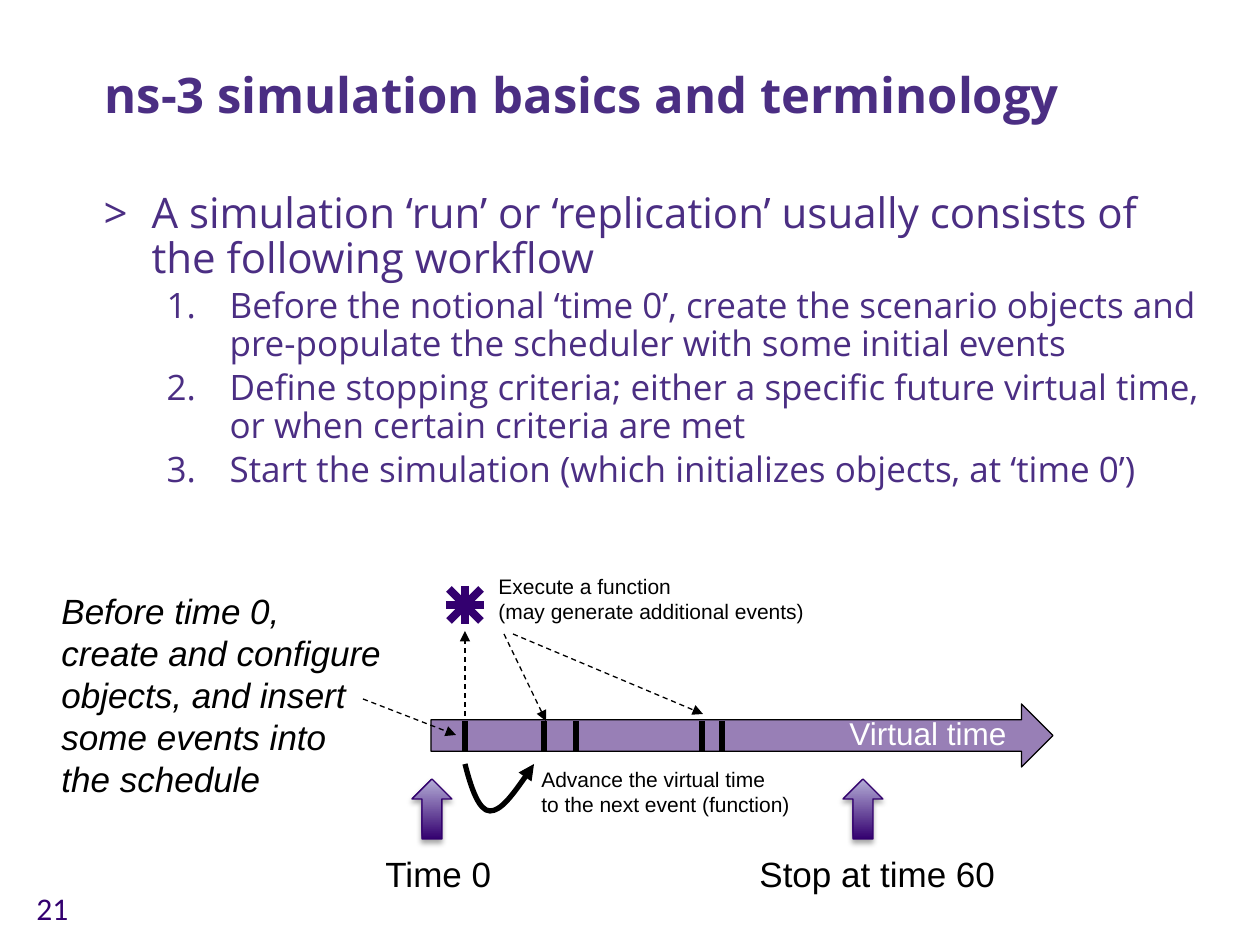
from lxml import etree
from pptx import Presentation
from pptx.dml.color import RGBColor
from pptx.enum.dml import MSO_LINE
from pptx.enum.shapes import MSO_CONNECTOR, MSO_SHAPE
from pptx.enum.text import MSO_ANCHOR, MSO_AUTO_SIZE, PP_ALIGN
from pptx.oxml import parse_xml
from pptx.oxml.ns import nsdecls, qn
from pptx.util import Emu, Pt

STRAIGHT = MSO_CONNECTOR.STRAIGHT
RIGHT_ARROW, UP_ARROW = MSO_SHAPE.RIGHT_ARROW, MSO_SHAPE.UP_ARROW
DASH = MSO_LINE.DASH
BOTTOM, TOP = MSO_ANCHOR.BOTTOM, MSO_ANCHOR.TOP
LEFT = PP_ALIGN.LEFT
NO_FIT, GROW = MSO_AUTO_SIZE.NONE, MSO_AUTO_SIZE.SHAPE_TO_FIT_TEXT

PX = 914400 / 126
PURPLE, DEEP_PURPLE, LILAC = "4B2E83", "33006F", "B5AED7"
BLACK, WHITE = "000000", "FFFFFF"
HEADING_FONT, LABEL_FONT = "Open Sans", "Arial"

TITLE = "ns-3 simulation basics and terminology"
TITLE_BOX = (92, 53, 1128, 77)
INTRO = "A simulation ‘run’ or ‘replication’ usually consists of the following workflow"
STEPS = [
    "Before the notional ‘time 0’, create the scenario objects and "
    "pre-populate the scheduler with some initial events",
    "Define stopping criteria; either a specific future virtual time, "
    "or when certain criteria are met",
    "Start the simulation (which initializes objects, at ‘time 0’)",
]
BODY_BOX = (91, 186, 1129, 614)

# box, lines, size, colour, font, italic
LABELS = [
    ((24, 883, 67, 50), ["21"], 18, DEEP_PURPLE, "Calibri", False),
    ((486, 567, 333, 63), ["Execute a function", "(may generate additional events)"],
     12, BLACK, LABEL_FONT, False),
    ((529, 760, 276, 63), ["Advance the virtual time", "to the next event (function)"],
     12, BLACK, LABEL_FONT, False),
    ((837, 708, 184, 50), ["Virtual time"], 18, WHITE, LABEL_FONT, False),
    ((373, 846, 132, 55), ["Time 0"], 20, BLACK, LABEL_FONT, False),
    ((747, 846, 272, 55), ["Stop at time 60"], 20, BLACK, LABEL_FONT, False),
    ((49, 583, 348, 224),
     ["Before time 0,", "create and configure", "objects, and insert",
      "some events into", "the schedule"], 20, BLACK, LABEL_FONT, True),
]

TIMELINE_BOX = (431, 704, 622, 63)
EVENT_TIMES = [465, 544, 576, 702, 722]
EVENT_TOP, EVENT_BOTTOM = 721, 752
STAR_CENTRE, STAR_ARM, STAR_DIAGONAL = (465, 605), 19, 16
DASHED_ARROWS = [
    ((465, 716), (465, 631)),
    ((504, 634), (546, 721)),
    ((513, 634), (703, 714)),
    ((363, 699), (456, 735)),
]
ADVANCE_START = (465, 764)
ADVANCE_CURVE = [(471, 788), (479, 811), (490, 811), (501, 811), (518, 788), (534, 764)]
MARKER_LEFTS, MARKER_TOP, MARKER_SIZE = [412, 843], 779, (40, 60)


def px(value):
    return Emu(round(value * PX))


def color(hex_string):
    return RGBColor.from_string(hex_string)


def place(shape, box):
    shape.left, shape.top, shape.width, shape.height = map(px, box)


def add_run(paragraph, text, size, hex_color, font, bold=False, italic=False):
    run = paragraph.add_run()
    run.text = text
    run.font.size = Pt(size)
    run.font.name = font
    run.font.bold = bold
    run.font.italic = italic
    run.font.color.rgb = color(hex_color)


def add_bullet(paragraph, indent, hanging, bullet_tag, **attributes):
    properties = paragraph._p.get_or_add_pPr()
    properties.set("marL", str(px(indent)))
    properties.set("indent", str(-px(hanging)))
    etree.SubElement(properties, qn("a:buFont"), typeface=HEADING_FONT)
    etree.SubElement(properties, qn(bullet_tag), **attributes)


def add_label(slide, box, lines, size, hex_color, font, italic):
    text_box = slide.shapes.add_textbox(*map(px, box))
    frame = text_box.text_frame
    frame.word_wrap = False
    frame.auto_size = GROW
    for number, text in enumerate(lines):
        paragraph = frame.add_paragraph() if number else frame.paragraphs[0]
        add_run(paragraph, text, size, hex_color, font, italic=italic)


def add_arrowhead(line):
    etree.SubElement(line._get_or_add_ln(), qn("a:tailEnd"), type="triangle")


def add_line(slide, start, end, hex_color, width):
    connector = slide.shapes.add_connector(STRAIGHT, *map(px, start + end))
    connector.line.color.rgb = color(hex_color)
    connector.line.width = Pt(width)
    etree.SubElement(connector._element.spPr, qn("a:effectLst"))
    return connector


def add_timeline(slide):
    timeline = slide.shapes.add_shape(RIGHT_ARROW, *map(px, TIMELINE_BOX))
    timeline.shadow.inherit = False
    timeline.fill.solid()
    timeline.fill.fore_color.rgb = color(DEEP_PURPLE)
    fill_color = timeline._element.spPr.find(qn("a:solidFill"))[0]
    etree.SubElement(fill_color, qn("a:alpha"), val="50000")
    timeline.line.color.rgb = color(BLACK)
    timeline.line.width = Pt(0.75)


def add_star(slide):
    x, y = STAR_CENTRE
    d, arm = STAR_DIAGONAL, STAR_ARM
    for dx, dy in [(d, d), (-d, d), (0, arm), (arm, 0)]:
        add_line(slide, (x - dx, y - dy), (x + dx, y + dy), DEEP_PURPLE, 4.5)


def add_advance_curve(slide):
    """Draw the control points, then join each three into one Bézier segment."""
    builder = slide.shapes.build_freeform(*ADVANCE_START, scale=PX)
    builder.add_line_segments(ADVANCE_CURVE, close=False)
    curve = builder.convert_to_shape()
    segments = list(curve._element.iter(qn("a:lnTo")))
    outline = segments[0].getparent()
    for first in range(0, len(segments), 3):
        bezier = etree.SubElement(outline, qn("a:cubicBezTo"))
        for segment in segments[first:first + 3]:
            bezier.append(segment[0])
            outline.remove(segment)
    curve.shadow.inherit = False
    curve.fill.background()
    curve.line.color.rgb = color(BLACK)
    curve.line.width = Pt(3)
    add_arrowhead(curve.line)


def add_marker(slide, left):
    marker = slide.shapes.add_shape(UP_ARROW, *map(px, (left, MARKER_TOP, *MARKER_SIZE)))
    marker.fill.gradient()
    marker.fill.gradient_angle = 90
    for stop, hex_color in zip(marker.fill.gradient_stops, (DEEP_PURPLE, LILAC)):
        stop.color.rgb = color(hex_color)
    marker.line.color.rgb = color("32006D")
    marker.line.width = Pt(0.75)
    marker._element.spPr.append(parse_xml(
        f'<a:effectLst {nsdecls("a")}><a:outerShdw blurRad="{Pt(3.1)}" dist="{Pt(1.8)}" '
        'dir="5400000" rotWithShape="0"><a:srgbClr val="000000"><a:alpha val="35000"/>'
        '</a:srgbClr></a:outerShdw></a:effectLst>'))


def fill_placeholders(slide):
    title, body = slide.placeholders[0], slide.placeholders[1]
    for placeholder, box, anchor in ((title, TITLE_BOX, BOTTOM), (body, BODY_BOX, TOP)):
        place(placeholder, box)
        placeholder.text_frame.auto_size = NO_FIT
        placeholder.text_frame.vertical_anchor = anchor
    heading = title.text_frame.paragraphs[0]
    heading.alignment = LEFT
    heading.line_spacing = 0.9
    add_run(heading, TITLE, 28, PURPLE, HEADING_FONT, bold=True)

    intro = body.text_frame.paragraphs[0]
    add_bullet(intro, 48, 48, "a:buChar", char=">")
    intro.space_before = Pt(0)
    intro.line_spacing = 0.89
    add_run(intro, INTRO, 24, PURPLE, HEADING_FONT)
    for text in STEPS:
        step = body.text_frame.add_paragraph()
        step.level = 1
        add_bullet(step, 126, 63, "a:buAutoNum", type="arabicPeriod")
        step.space_before = Pt(4)
        step.line_spacing = 0.89
        add_run(step, text, 20, PURPLE, HEADING_FONT)


def main():
    presentation = Presentation()
    presentation.slide_width, presentation.slide_height = px(1260), px(945)
    slide = presentation.slides.add_slide(presentation.slide_layouts[1])
    fill_placeholders(slide)
    add_timeline(slide)
    add_star(slide)
    for x in EVENT_TIMES:
        add_line(slide, (x, EVENT_TOP), (x, EVENT_BOTTOM), BLACK, 3)
    for start, end in DASHED_ARROWS:
        arrow = add_line(slide, start, end, BLACK, 0.75)
        arrow.line.dash_style = DASH
        add_arrowhead(arrow.line)
    add_advance_curve(slide)
    for left in MARKER_LEFTS:
        add_marker(slide, left)
    for label in LABELS:
        add_label(slide, *label)
    presentation.save("out.pptx")


if __name__ == "__main__":
    main()
